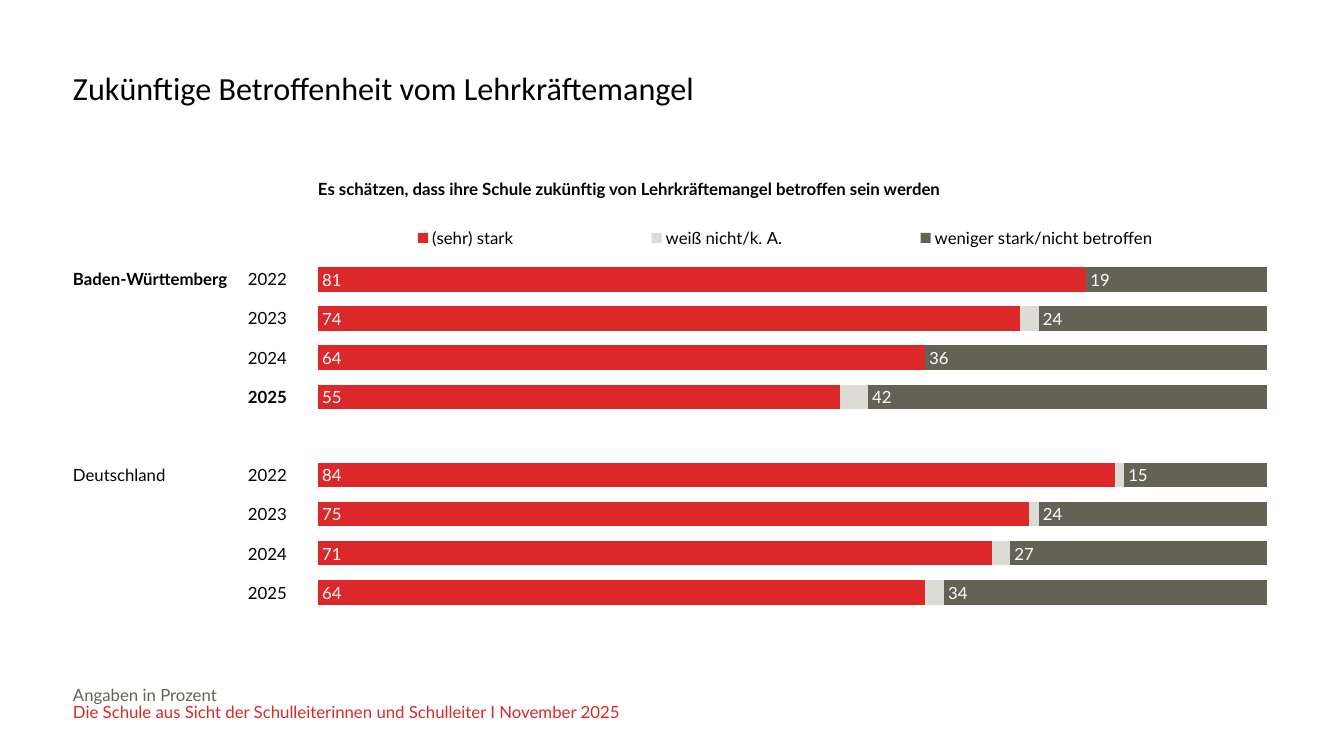
from lxml import etree
from pptx import Presentation, util as u
from pptx.chart.data import CategoryChartData
from pptx.dml.color import RGBColor
from pptx.enum import chart as ch, text

BLACK = RGBColor(0x00, 0x00, 0x00)
WHITE = RGBColor(0xFF, 0xFF, 0xFF)
RED = RGBColor(0xDC, 0x28, 0x28)
LIGHT = RGBColor(0xDC, 0xDB, 0xD5)
DARK = RGBColor(0x63, 0x62, 0x55)

TITLE = "Zukünftige Betroffenheit vom Lehrkräftemangel"
QUESTION = "Es schätzen, dass ihre Schule zukünftig von Lehrkräftemangel betroffen sein werden"
FOOTER = [
    ("Angaben in Prozent", DARK),
    ("Die Schule aus Sicht der Schulleiterinnen und Schulleiter I November 2025", RED),
]
ROWS = [
    ("Baden-Württemberg", "2022"),
    ("", "2023"),
    ("", "2024"),
    ("", "2025"),
    ("", ""),
    ("Deutschland", "2022"),
    ("", "2023"),
    ("", "2024"),
    ("", "2025"),
]
BOLD = {(0, 0), (3, 1)}
SERIES = [
    ("(sehr) stark", (81, 74, 64, 55, None, 84, 75, 71, 64), RED, True),
    ("weiß nicht/k. A.", (None, 2, None, 3, None, 1, 1, 2, 2), LIGHT, False),
    ("weniger stark/nicht betroffen", (19, 24, 36, 42, None, 15, 24, 27, 34), DARK, True),
]
PLOT = (0.055, 0.117, 0.867, 0.793)
LEGEND = (0.025, 0.034, 0.914, 0.067)
NO_STYLE = "{2D5ABB26-0587-4C30-8999-92F81FD0307C}"
C = "http://schemas.openxmlformats.org/drawingml/2006/chart"


def px(n):
    return u.Emu(round(n * 914400 / 100.8))


def box(*n):
    return [px(v) for v in n]


def style(p, color=BLACK, size=12, name="Lato", bold=False, spacing=0.85):
    p.line_spacing = spacing
    f = p.font
    f.size, f.name, f.bold = u.Pt(size), name, bold
    f.color.rgb = color


def add_text(s, frame, lines, **kw):
    tf = s.shapes.add_textbox(*box(*frame)).text_frame
    tf.word_wrap = True
    tf.margin_left = tf.margin_right = tf.margin_top = tf.margin_bottom = 0
    for i, (line, color) in enumerate(lines):
        p = tf.add_paragraph() if i else tf.paragraphs[0]
        p.text = line
        style(p, color, **kw)


def add_table(s, frame, cols, rows, bold, anchor):
    gf = s.shapes.add_table(len(rows), len(cols), *box(*frame))
    t = gf.table
    t.first_row = t.horz_banding = False
    t._tbl.tblPr.find("{*}tableStyleId").text = NO_STYLE
    for col, width in zip(t.columns, cols):
        col.width = px(width)
    for i, row in enumerate(rows):
        for j in range(len(cols)):
            cell = t.cell(i, j)
            cell.fill.background()
            cell.margin_left = cell.margin_right = 0
            cell.margin_top = cell.margin_bottom = 0
            cell.vertical_anchor = anchor
            p = cell.text_frame.paragraphs[0]
            if j < len(row) and row[j]:
                p.text = row[j]
            style(p, bold=(i, j) in bold)


def set_layout(parent, index, frame, inner=False):
    for old in parent.findall(f"{{{C}}}layout"):
        parent.remove(old)
    layout = etree.Element(f"{{{C}}}layout")
    manual = etree.SubElement(layout, f"{{{C}}}manualLayout")
    items = [("layoutTarget", "inner")] if inner else []
    items += [("xMode", "edge"), ("yMode", "edge"), *zip("xywh", frame)]
    for tag, val in items:
        etree.SubElement(manual, f"{{{C}}}{tag}").set("val", str(val))
    parent.insert(index, layout)


def add_bars(s, frame):
    data = CategoryChartData()
    data.categories = [str(i + 1) for i in range(len(ROWS))]
    for name, values, _, _ in SERIES:
        data.add_series(name, values)
    chart = s.shapes.add_chart(ch.XL_CHART_TYPE.BAR_STACKED, *box(*frame), data).chart
    chart.has_title = False
    chart.font.size, chart.font.name = u.Pt(12), "Lato"
    chart.font.color.rgb = BLACK

    cat, val = chart.category_axis, chart.value_axis
    cat.visible = val.visible = False
    cat.reverse_order = True
    val.has_major_gridlines = False
    val.minimum_scale, val.maximum_scale, val.major_unit = 0, 100, 20

    plot = chart.plots[0]
    plot.gap_width, plot.overlap, plot.vary_by_categories = 60, 100, False
    for series, (_, _, color, labelled) in zip(plot.series, SERIES):
        series.format.fill.solid()
        series.format.fill.fore_color.rgb = color
        if labelled:
            labels = series.data_labels
            labels.show_value = True
            labels.position = ch.XL_LABEL_POSITION.INSIDE_BASE
            labels.font.size, labels.font.name = u.Pt(12), "Lato"
            labels.font.color.rgb = WHITE

    chart.has_legend = True
    chart.legend.position = ch.XL_LEGEND_POSITION.TOP
    chart.legend.include_in_layout = False
    set_layout(chart.legend._element, 1, LEGEND)
    set_layout(chart._chartSpace.chart.plotArea, 0, PLOT, inner=True)


def main():
    prs = Presentation()
    prs.slide_width, prs.slide_height = box(1344, 756)
    s = prs.slides.add_slide(prs.slide_layouts[6])
    add_table(s, (73, 261, 1232, 353), (175, 906, 151), ROWS, BOLD, text.MSO_ANCHOR.MIDDLE)
    add_bars(s, (258, 208, 1094, 444))
    add_text(s, (73, 73, 1231, 92), [(TITLE, BLACK)], size=23, name="Calibri", spacing=0.9)
    add_text(s, (73, 688, 989, 40), FOOTER)
    add_table(s, (318, 177, 836, 22), (836,), [(QUESTION,)], {(0, 0)}, text.MSO_ANCHOR.BOTTOM)
    prs.save("out.pptx")


if __name__ == "__main__":
    main()
